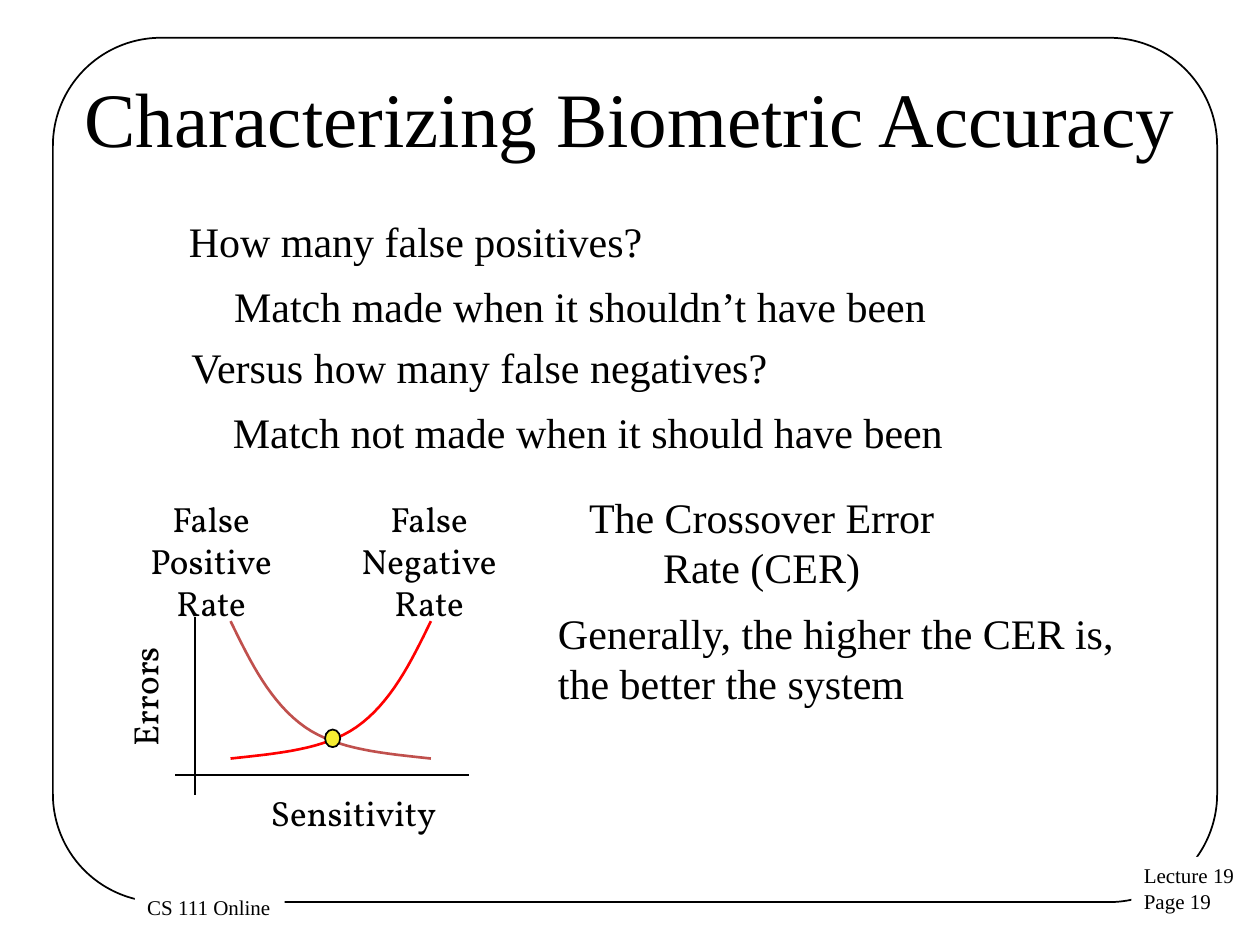
from lxml import etree
from pptx import Presentation
from pptx.dml.color import RGBColor
from pptx.enum import shapes, text
from pptx.oxml.ns import qn
from pptx.util import Inches, Pt

BLACK = RGBColor(0, 0, 0)
WHITE = RGBColor(255, 255, 255)
BRICK = RGBColor(0xC0, 0x50, 0x4D)
RED = RGBColor(255, 0, 0)
YELLOW = RGBColor(0xF6, 0xED, 0x32)
SERIF = "Times New Roman"
LABEL = "Vollkorn"
CURVE_STEPS = 16

# Cubic segments of the falling curve: start, two controls, end
FALLING = [
    [(1.83, 4.93), (1.99, 5.26), (2.15, 5.58), (2.42, 5.77)],
    [(2.42, 5.77), (2.68, 5.95), (3.05, 5.98), (3.42, 6.02)],
]
MIRROR = 1.83 + 3.42


def write(shape, wording, size, font=SERIF, centered=False, wrap=False):
    frame = shape.text_frame
    frame.text = wording
    frame.word_wrap = wrap
    frame.auto_size = text.MSO_AUTO_SIZE.NONE
    for para in frame.paragraphs:
        para.alignment = text.PP_ALIGN.CENTER if centered else text.PP_ALIGN.LEFT
        for span in para.runs:
            span.font.size = Pt(size)
            span.font.name = font
            span.font.color.rgb = BLACK


def add_text(page, at, wording, size, **style):
    box = page.shapes.add_textbox(*map(Inches, at))
    write(box, wording, size, **style)
    return box


def add_shape(page, kind, at, fill=None, line=None):
    shape = page.shapes.add_shape(kind, *map(Inches, at))
    shape.shadow.inherit = False
    if fill is None:
        shape.fill.background()
    else:
        shape.fill.solid()
        shape.fill.fore_color.rgb = fill
    if line is None:
        shape.line.fill.background()
    else:
        shape.line.color.rgb = line
        shape.line.width = Pt(1)
    return shape


def add_axis(page, *ends):
    axis = page.shapes.add_connector(shapes.MSO_CONNECTOR.STRAIGHT, *map(Inches, ends))
    axis.line.color.rgb = BLACK
    axis.line.width = Pt(1)
    etree.SubElement(axis._element.spPr, qn("a:effectLst"))


def bezier(points, t):
    weights = ((1 - t) ** 3, 3 * t * (1 - t) ** 2, 3 * t * t * (1 - t), t ** 3)
    return tuple(sum(w * p[i] for w, p in zip(weights, points)) for i in (0, 1))


def add_curve(page, segments, color, mirrored=False):
    points = [bezier(s, n / CURVE_STEPS) for s in segments for n in range(CURVE_STEPS + 1)]
    if mirrored:
        points = [(MIRROR - x, y) for x, y in points]
    places = [(Inches(x), Inches(y)) for x, y in points]
    builder = page.shapes.build_freeform(*places[0])
    builder.add_line_segments(places[1:], close=False)
    curve = builder.convert_to_shape()
    curve.shadow.inherit = False
    curve.fill.background()
    curve.line.color.rgb = color
    curve.line.width = Pt(1.5)


def add_frame(page):
    frame = add_shape(page, shapes.MSO_SHAPE.ROUNDED_RECTANGLE, (0.42, 0.3, 9.24, 6.86), line=BLACK)
    frame.adjustments[0] = 0.125
    for at, wording in [
        ((8.98, 6.8, 0.93, 0.51), "Lecture 19\nPage 19"),
        ((1.07, 7.05, 1.19, 0.3), "CS 111 Online"),
    ]:
        footer = add_shape(page, shapes.MSO_SHAPE.RECTANGLE, at, fill=WHITE)
        write(footer, wording, 12)
        footer.text_frame.vertical_anchor = text.MSO_ANCHOR.TOP


def add_title(page, wording):
    title = page.shapes.title
    title.left, title.top, title.width, title.height = map(Inches, (0.5, 0.3, 9, 1.25))
    write(title, wording, 44, centered=True, wrap=True)
    title.text_frame.vertical_anchor = text.MSO_ANCHOR.MIDDLE


def add_error_graph(page):
    add_axis(page, 1.55, 4.9, 1.55, 6.31)
    add_axis(page, 1.39, 6.15, 3.72, 6.15)
    errors = add_text(page, (0.93, 5.15, 0.54, 0.87), "Errors", 20, font=LABEL)
    errors.text_frame._txBody.bodyPr.set("vert", "vert270")
    add_text(page, (2.05, 6.23, 1.52, 0.44), "Sensitivity", 20, font=LABEL)
    add_curve(page, FALLING, BRICK)
    add_curve(page, FALLING, RED, mirrored=True)
    for left, kind in [(1, "Positive"), (2.73, "Negative")]:
        add_text(page, (left, 3.9, 1.35, 1.11), f"False {kind} Rate", 20,
                 font=LABEL, centered=True, wrap=True)
    # Crossover point
    add_shape(page, shapes.MSO_SHAPE.OVAL, (2.58, 5.79, 0.12, 0.14), fill=YELLOW, line=BLACK)


def main():
    deck = Presentation()
    deck.slide_width, deck.slide_height = Inches(10), Inches(7.5)
    page = deck.slides.add_slide(deck.slide_layouts[5])
    add_frame(page)
    add_title(page, "Characterizing Biometric Accuracy")

    # Questions and their explanations
    for left, top, width, wording in [
        (1.4, 1.66, 3.84, "How many false positives?"),
        (1.76, 2.18, 5.75, "Match made when it shouldn’t have been"),
        (1.42, 2.66, 4.82, "Versus how many false negatives?"),
        (1.75, 3.18, 5.9, "Match not made when it should have been"),
    ]:
        add_text(page, (left, top, width, 0.5), wording, 24)

    add_error_graph(page)

    # Conclusion
    add_text(page, (4.33, 3.85, 3.43, 0.91), "The Crossover Error Rate (CER)", 24,
             centered=True, wrap=True)
    add_text(page, (4.33, 4.77, 4.75, 0.91),
             "Generally, the higher the CER is, the better the system", 24, wrap=True)
    deck.save("out.pptx")


if __name__ == "__main__":
    main()
